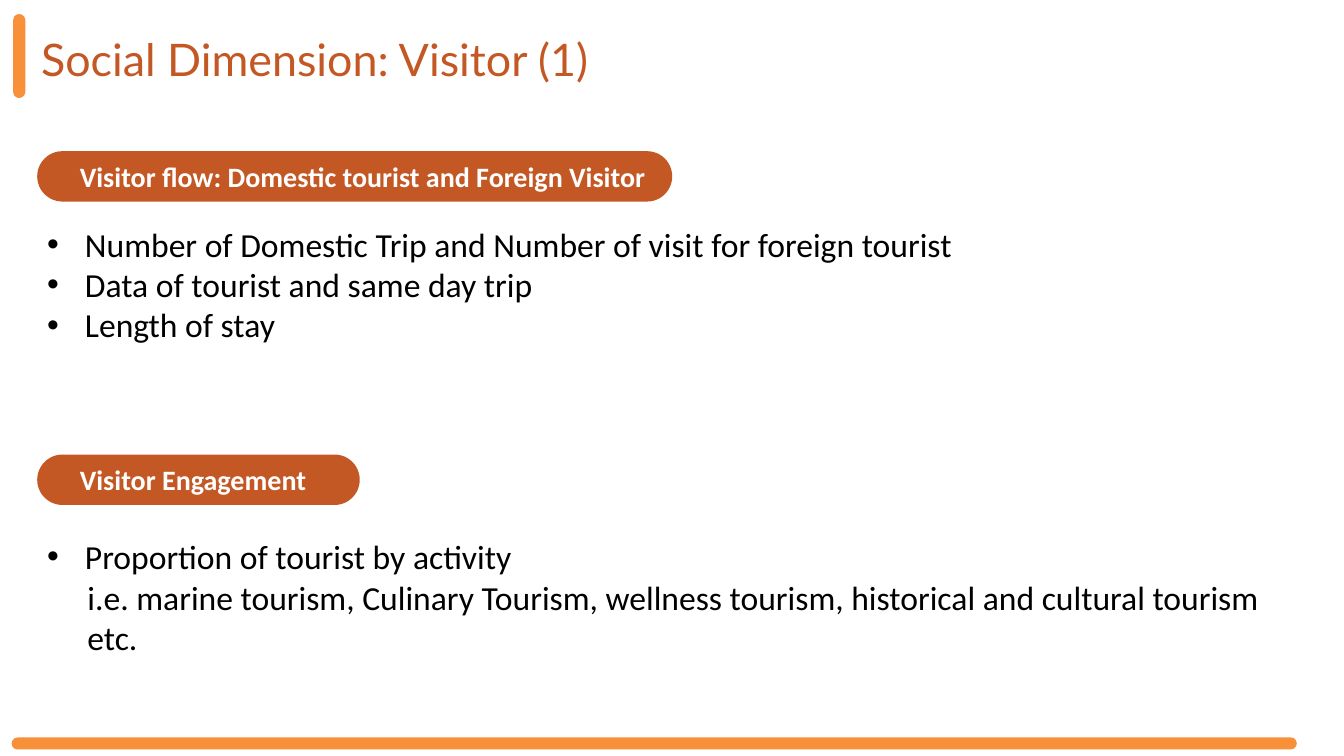
from lxml import etree
from pptx import Presentation
from pptx.dml.color import RGBColor
from pptx.enum import shapes, text
from pptx.oxml import ns
from pptx.util import Pt

ORANGE = RGBColor(0xF7, 0x90, 0x39)
RUST = RGBColor(0xC4, 0x58, 0x24)
WHITE = RGBColor(0xFF, 0xFF, 0xFF)
BLACK = RGBColor(0, 0, 0)

SECTION_LEFT = 26.6
PILL_HEIGHT = 36
BULLET_INDENT = 27
CONTINUATION_INDENT = 28.8


def add_pill(page, left, top, width, height, color):
    """Add a bar with fully rounded ends."""
    pill = page.shapes.add_shape(shapes.MSO_SHAPE.ROUNDED_RECTANGLE,
                                 Pt(left), Pt(top), Pt(width), Pt(height))
    pill.adjustments[0] = 0.5
    pill.shadow.inherit = False
    pill.fill.solid()
    pill.fill.fore_color.rgb = color
    pill.line.fill.background()
    return pill


def add_text_box(page, left, top, width, height):
    box = page.shapes.add_textbox(Pt(left), Pt(top), Pt(width), Pt(height))
    box.text_frame.word_wrap = True
    return box


def write(para, words, size=24, font="Calibri", color=BLACK, bold=False,
          indent=0, bullet=False):
    para.alignment = text.PP_ALIGN.LEFT
    properties = para._p.get_or_add_pPr()
    if indent:
        properties.set("marL", str(Pt(indent)))
        properties.set("indent", str(Pt(-indent if bullet else 0)))
    if bullet:
        etree.SubElement(properties, ns.qn("a:buFont"), typeface="Arial")
        etree.SubElement(properties, ns.qn("a:buChar"), char="•")
    span = para.add_run()
    span.text = words
    span.font.size = Pt(size)
    span.font.name = font
    span.font.bold = bold
    span.font.color.rgb = color


def add_frame(page, width, height):
    """Add the bar beside the title and the bar along the foot."""
    thickness = 8.64
    add_pill(page, 8.3, height - 13.3, width - 42, thickness, ORANGE)
    add_pill(page, 9.4, 10, thickness, 60, ORANGE)


def add_title(page, left, top, width, height, words):
    frame = add_text_box(page, left, top, width, height).text_frame
    frame.vertical_anchor = text.MSO_ANCHOR.MIDDLE
    write(frame.paragraphs[0], words, size=32, font="Lato", color=RUST)


def add_section(page, left, top, heading, heading_width, lines, lines_offset,
                lines_width, lines_height):
    """Add a heading pill and its lines, given as (words, is bullet) pairs."""
    pill = add_pill(page, left, top, heading_width, PILL_HEIGHT, RUST)
    frame = pill.text_frame
    frame.word_wrap = True
    frame.vertical_anchor = text.MSO_ANCHOR.MIDDLE
    frame.margin_left, frame.margin_right = Pt(25.2), 0
    write(frame.paragraphs[0], heading, size=20, color=WHITE, bold=True)

    body = add_text_box(page, left, top + lines_offset,
                        lines_width, lines_height).text_frame
    for index, (words, bullet) in enumerate(lines):
        para = body.add_paragraph() if index else body.paragraphs[0]
        write(para, words, bullet=bullet,
              indent=BULLET_INDENT if bullet else CONTINUATION_INDENT)


def main():
    deck = Presentation()
    deck.slide_width, deck.slide_height = Pt(960), Pt(540)
    page = deck.slides.add_slide(deck.slide_layouts[6])
    add_frame(page, 960, 540)
    add_title(page, 22.3, 20.9, 790, 41.8, "Social Dimension: Visitor (1)")
    add_section(page, SECTION_LEFT, 108,
                "Visitor flow: Domestic tourist and Foreign Visitor", 453.6,
                [("Number of Domestic Trip and Number of visit for foreign tourist", True),
                 ("Data of tourist and same day trip", True),
                 ("Length of stay", True)],
                48.2, 862.6, 94.3)
    add_section(page, SECTION_LEFT, 324.7, "Visitor Engagement", 230.4,
                [("Proportion of tourist by activity", True),
                 ("i.e. marine tourism, Culinary Tourism, wellness tourism, "
                  "historical and cultural tourism etc.", False)],
                54.7, 884.9, 123.8)
    deck.save("out.pptx")


if __name__ == "__main__":
    main()
